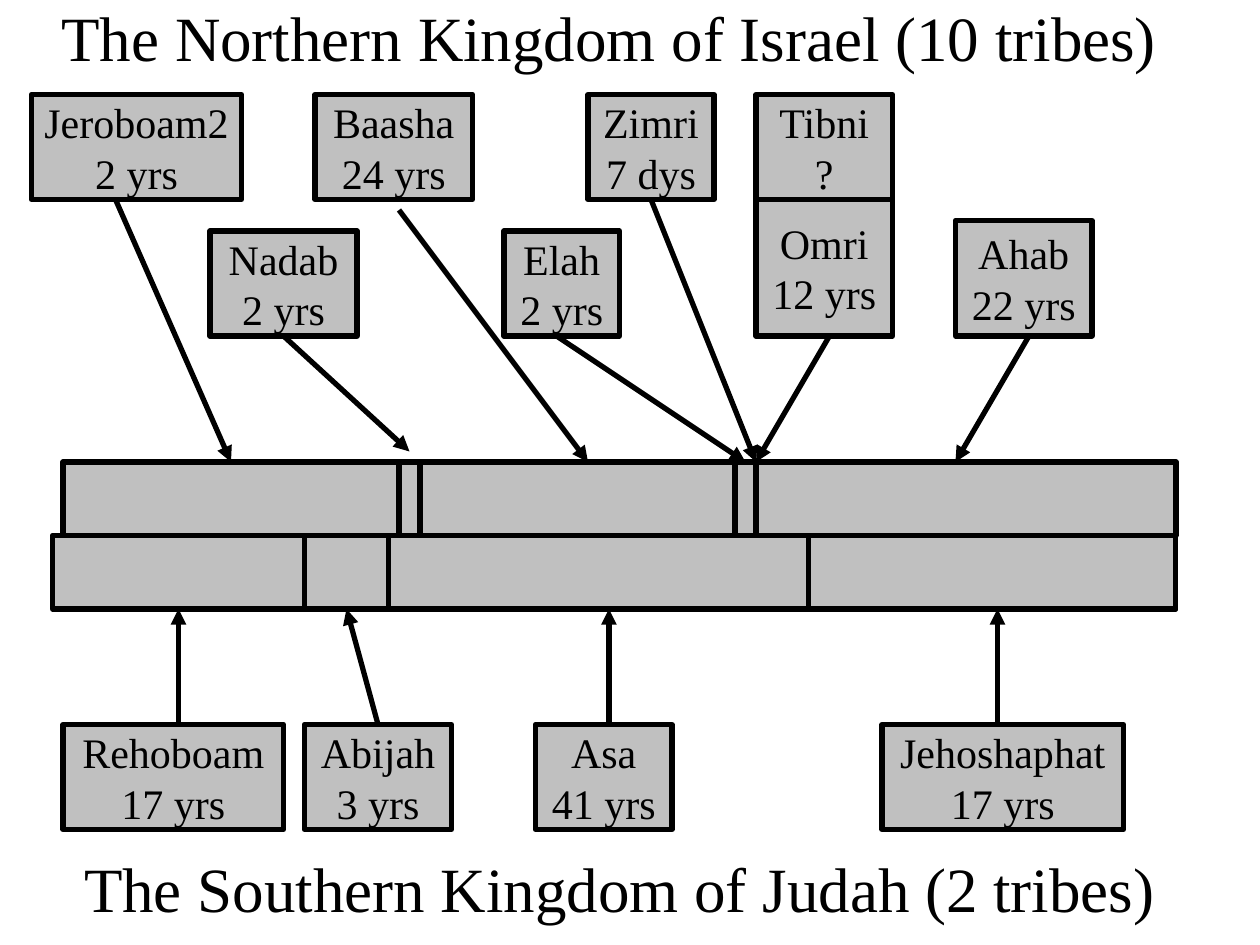
from pptx import Presentation
from pptx.dml.color import RGBColor
from pptx.enum.shapes import MSO_CONNECTOR as Connector, MSO_SHAPE as Preset
from pptx.enum.text import MSO_ANCHOR as Anchor, PP_ALIGN as Align
from pptx.oxml.ns import qn
from pptx.util import Cm, Pt
from lxml.etree import SubElement

COLOURS = {"ink": "000000", "box": "C0C0C0", "paper": "FFFFFF"}
GRID = 2.54 / 12  # every position falls on a twelfth of an inch


def grid(*steps):
    return [Cm(step * GRID) for step in steps]


def colour(name):
    return RGBColor.from_string(COLOURS[name])


class Timeline:
    font_name = "Times New Roman"
    frame_format = {"word_wrap": True, "vertical_anchor": Anchor.MIDDLE,
                    "margin_left": Cm(0.2), "margin_right": Cm(0.2)}

    def __init__(self, slide):
        self.slide = slide

    def block(self, place, lines=(), size=24, fill="box", edge="ink", width=3):
        block = self.slide.shapes.add_shape(Preset.RECTANGLE, *grid(*place))
        block.shadow.inherit = False
        block.fill.solid()
        block.fill.fore_color.rgb = colour(fill)
        block.line.color.rgb = colour(edge)
        block.line.width = Pt(width)
        if lines:
            self.label(block.text_frame, lines, size)

    def label(self, frame, lines, size):
        for name, value in self.frame_format.items():
            setattr(frame, name, value)
        frame.text = "\n".join(lines)
        for paragraph in frame.paragraphs:
            paragraph.alignment = Align.CENTER
            font_format = {"name": self.font_name, "size": Pt(size)}
            for name, value in font_format.items():
                setattr(paragraph.font, name, value)
            paragraph.font.color.rgb = colour("ink")

    def title(self, left, top, text):
        self.block((left, top, 108, 7), [text], 36, "paper", "paper", 0.25)

    def arrow(self, start, end):
        arrow = self.slide.shapes.add_connector(
            Connector.STRAIGHT, *grid(*start, *end))
        arrow.line.color.rgb = colour("ink")
        arrow.line.width = Pt(3)
        outline = arrow._element.spPr.find(qn("a:ln"))
        SubElement(outline, qn("a:tailEnd"), type="triangle")
        SubElement(arrow._element.spPr, qn("a:effectLst"))


# Places, in grid steps: left, top, width, height
TITLES = [
    (4, 0, "The Northern Kingdom of Israel (10 tribes)"),
    (5, 81, "The Southern Kingdom of Judah (2 tribes)"),
]
KINGS = [
    # Israel
    ("Jeroboam2", "2 yrs", (3, 9, 20, 10)),
    ("Nadab", "2 yrs", (20, 22, 14, 10)),
    ("Baasha", "24 yrs", (30, 9, 15, 10)),
    ("Elah", "2 yrs", (48, 22, 11, 10)),
    ("Zimri", "7 dys", (56, 9, 12, 10)),
    ("Tibni", "?", (72, 9, 13, 10)),
    ("Omri", "12 yrs", (72, 19, 13, 13)),
    ("Ahab", "22 yrs", (91, 21, 13, 11)),
    # Judah
    ("Rehoboam", "17 yrs", (6, 69, 21, 10)),
    ("Abijah", "3 yrs", (29, 69, 14, 10)),
    ("Asa", "41 yrs", (51, 69, 13, 10)),
    ("Jehoshaphat", "17 yrs", (84, 69, 23, 10)),
]
# Top of each bar, then left and width of the bar and of the reigns on it
BARS = [
    (44, [(6, 106), (38, 2), (70, 2)]),
    (51, [(5, 107), (29, 8), (77, 35)]),
]
ISRAEL_ARROWS = [
    ((11, 19), (22, 44)), ((27, 32), (39, 43)), ((38, 20), (56, 44)),
    ((53, 32), (71, 44)), ((62, 19), (72, 44)), ((79, 32), (72, 44)),
    ((98, 32), (91, 44)),
]
JUDAH_ARROWS = [(17, 17), (36, 33), (58, 58), (95, 95)]  # from king to bar


def main():
    deck = Presentation()
    deck.slide_width, deck.slide_height = Cm(25.4), Cm(19.05)
    timeline = Timeline(deck.slides.add_slide(deck.slide_layouts[6]))

    # Titles above and below
    for left, top, text in TITLES:
        timeline.title(left, top, text)

    # Kings with the length of their reign
    for king, reign, place in KINGS:
        timeline.block(place, [king, reign])

    # The two bars of the timeline
    for top, spans in BARS:
        for left, width in spans:
            timeline.block((left, top, width, 7))

    # Arrows from the kings to the bars
    for start, end in ISRAEL_ARROWS:
        timeline.arrow(start, end)
    for king_x, bar_x in JUDAH_ARROWS:
        timeline.arrow((king_x, 69), (bar_x, 58))

    deck.save("out.pptx")


if __name__ == "__main__":
    main()
